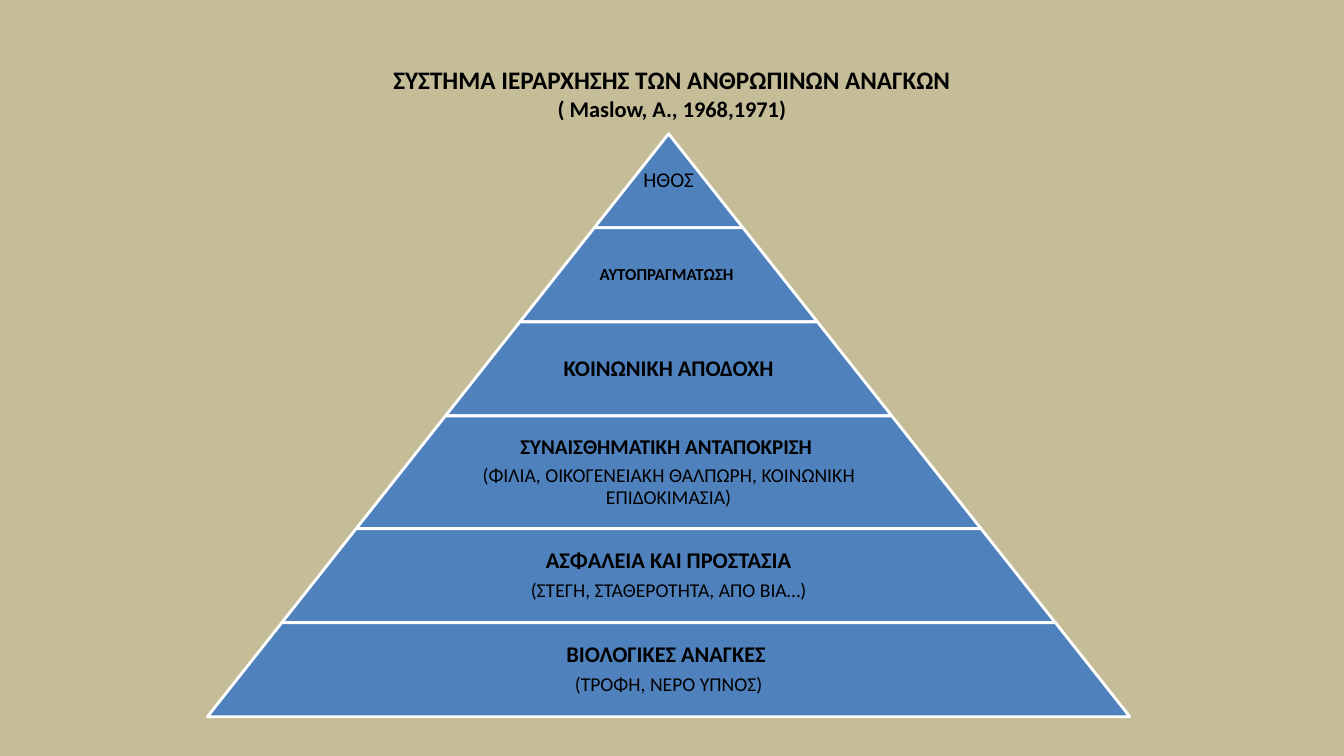
from pptx import Presentation
from pptx.dml.color import RGBColor
from pptx.enum.shapes import MSO_SHAPE
from pptx.enum.text import MSO_ANCHOR, PP_ALIGN
from pptx.util import Inches, Pt

TRAPEZOID = MSO_SHAPE.TRAPEZOID
MIDDLE = MSO_ANCHOR.MIDDLE
CENTER = PP_ALIGN.CENTER

SLOPE = 0.791  # horizontal run per unit of height on each side
APEX_COLUMN, APEX_ROW = 49.75, 17.7
PYRAMID_ROWS = 77.1
LABEL_SHARE = 0.65

TITLE = [("ΣΥΣΤΗΜΑ ΙΕΡΑΡΧΗΣΗΣ ΤΩΝ ΑΝΘΡΩΠΙΝΩΝ ΑΝΑΓΚΩΝ", 18),
         ("( Maslow, A., 1968,1971)", 16)]

# Relative height, then lines of (text, size, bold), from the apex down
TIERS = [
    (5, [("ΉΘΟΣ", 15, False)]),
    (5, [("ΑΥΤΟΠΡΑΓΜΑΤΩΣΗ ", 12, True)]),
    (5, [("ΚΟΙΝΩΝΙΚΗ ΑΠΟΔΟΧΗ", 16, True)]),
    (6, [("ΣΥΝΑΙΣΘΗΜΑΤΙΚΗ ΑΝΤΑΠΟΚΡΙΣΗ ", 15, True),
         ("(ΦΙΛΙΑ, ΟΙΚΟΓΕΝΕΙΑΚΗ ΘΑΛΠΩΡΗ, ΚΟΙΝΩΝΙΚΗ ΕΠΙΔΟΚΙΜΑΣΙΑ)", 14, False)]),
    (5, [("ΑΣΦΑΛΕΙΑ ΚΑΙ ΠΡΟΣΤΑΣΙΑ", 16, True),
         ("(ΣΤΕΓΗ, ΣΤΑΘΕΡΟΤΗΤΑ, ΑΠΟ ΒΙΑ…)", 14, False)]),
    (5, [("ΒΙΟΛΟΓΙΚΕΣ ΑΝΑΓΚΕΣ ", 16, True),
         ("(ΤΡΟΦΗ, ΝΕΡΟ ΥΠΝΟΣ)", 14, False)]),
]


def color(hex_code):
    return RGBColor.from_string(hex_code)


class Deck:
    """Places elements on a grid of 100 columns by 100 rows."""
    font, ink, paper = "Calibri", "000000", "C4BD97"
    tier_fill, tier_edge = "4F81BD", "FFFFFF"

    def __init__(self):
        self.prs = Presentation()
        self.prs.slide_width, self.prs.slide_height = Inches(13.33), Inches(7.5)
        self.column = self.prs.slide_width / 100
        self.row = self.prs.slide_height / 100
        self.slide = self.prs.slides.add_slide(self.prs.slide_layouts[6])
        background = self.slide.background.fill
        background.solid()
        background.fore_color.rgb = color(self.paper)

    def box(self, center, top, width, height):
        """Turn grid units into left, top, width and height."""
        return (round((center - width / 2) * self.column), round(top * self.row),
                round(width * self.column), round(height * self.row))

    def style(self, font, size, bold):
        font.name, font.size, font.bold = self.font, Pt(size), bold
        font.color.rgb = color(self.ink)

    def text_frame(self, *place):
        frame = self.slide.shapes.add_textbox(*self.box(*place)).text_frame
        frame.word_wrap = True
        frame.vertical_anchor = MIDDLE
        return frame

    def title(self, lines, *place):
        heading = self.text_frame(*place).paragraphs[0]
        heading.alignment = CENTER
        for index, (words, size) in enumerate(lines):
            if index:
                heading.add_line_break()
            run = heading.add_run()
            run.text = words
            self.style(run.font, size, True)

    def tier(self, *place):
        band = self.slide.shapes.add_shape(TRAPEZOID, *self.box(*place))
        band.adjustments[0] = SLOPE
        band.shadow.inherit = False
        band.fill.solid()
        band.fill.fore_color.rgb = color(self.tier_fill)
        band.line.color.rgb = color(self.tier_edge)
        band.line.width = Pt(2)

    def label(self, lines, *place):
        frame = self.text_frame(*place)
        frame.margin_left = frame.margin_right = Inches(0.02)
        frame.margin_top = frame.margin_bottom = Inches(0.02)
        for index, (words, size, bold) in enumerate(lines):
            line = frame.add_paragraph() if index else frame.paragraphs[0]
            line.text = words
            line.alignment = CENTER
            line.line_spacing = 0.9
            if index:
                line.space_before = Pt(5)
            self.style(line.font, size, bold)

    def pyramid(self, tiers):
        """Stack the tiers so that their sides form two straight slopes."""
        unit = PYRAMID_ROWS / sum(share for share, _ in tiers)
        widening = 2 * SLOPE * self.row / self.column
        top = APEX_ROW
        for index, (share, lines) in enumerate(tiers):
            height = share * unit
            width = (top + height - APEX_ROW) * widening
            label_width = width * LABEL_SHARE if index else width
            self.tier(APEX_COLUMN, top, width, height)
            self.label(lines, APEX_COLUMN, top, label_width, height)
            top += height


def main():
    deck = Deck()
    deck.title(TITLE, 50, 4, 90, 16.67)
    deck.pyramid(TIERS)
    deck.prs.save("out.pptx")


if __name__ == "__main__":
    main()
